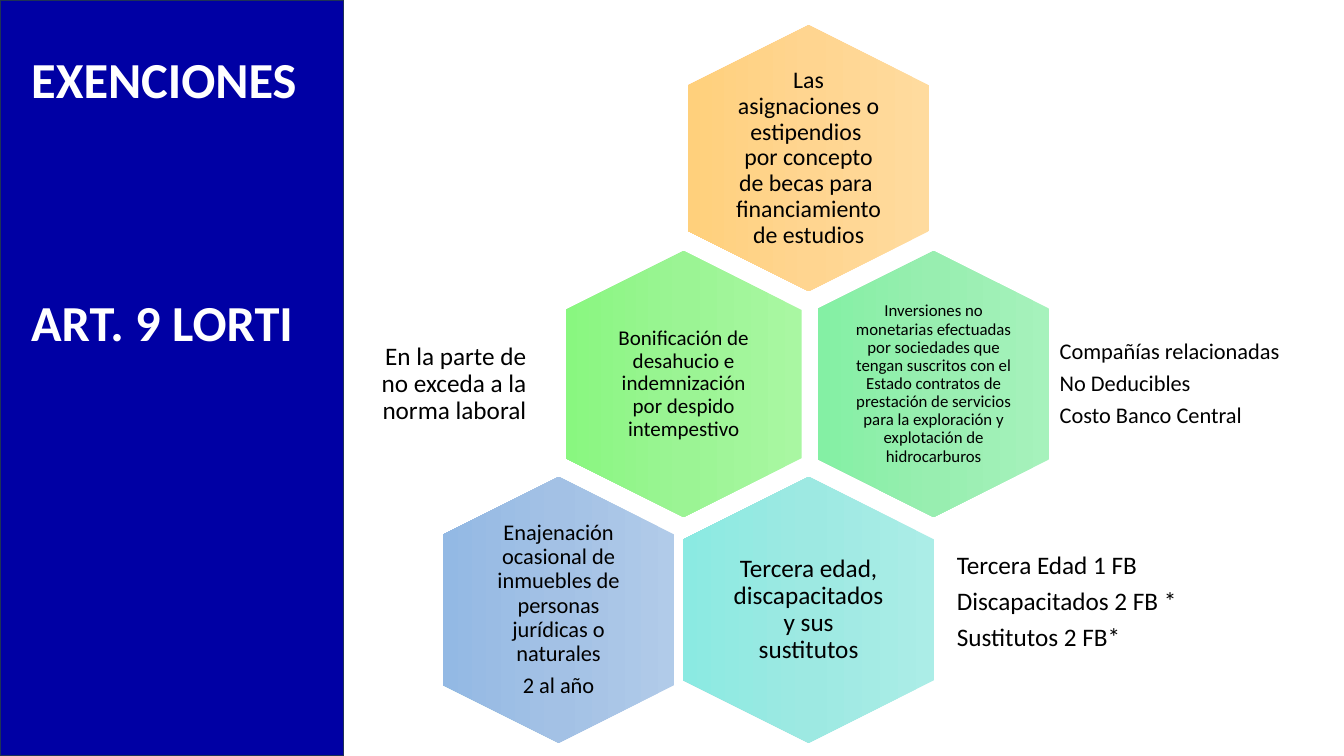
from copy import deepcopy
from dataclasses import dataclass

from lxml.etree import SubElement
from pptx import Presentation
from pptx.dml.color import RGBColor as RGB
from pptx.enum.shapes import MSO_SHAPE as Shape
from pptx.enum.text import MSO_ANCHOR as Anchor, MSO_AUTO_SIZE as AutoSize, PP_ALIGN as Align
from pptx.oxml.ns import qn
from pptx.util import Inches, Pt


@dataclass(frozen=True)
class Theme:
    font: str = "Calibri"
    ink: str = "000000"
    paper: str = "FFFFFF"
    panel: str = "0000A4"
    panel_edge: str = "1E3256"
    title_size: int = 36
    orange: tuple = ("FFDB9E", "FFD590", "FFD07C")
    green: tuple = ("A9F7A2", "9BF494", "89F780")
    mint: tuple = ("A6F2BC", "98EEB0", "84F0A4")
    aqua: tuple = ("ABEDE7", "9DE9E2", "8BEAE2")
    blue: tuple = ("B1CBE9", "A3C1E5", "93B9E4")


THEME = Theme()
SLIDE_W, SLIDE_H = 13.33, 7.5
PANEL_BOX = (0, 0, 3.41, SLIDE_H)

# Honeycomb grid: centre of the first cell, and the step between half columns and rows
FIRST_X, FIRST_Y = 5.54, 1.57
COLUMN_STEP, ROW_STEP = 1.24, 2.24
HEX_HEIGHT = 2.64

# column, row, width, colours, text width, inset, size, paragraphs
EXEMPTIONS = [
    (2, 0, 2.39, THEME.orange, 1.63, 0.07, 17,
     ["Las asignaciones o estipendios  por concepto de becas para  financiamiento de estudios"]),
    (1, 1, 2.34, THEME.green, 1.61, 0.06, 15,
     ["Bonificación de desahucio e indemnización por despido intempestivo"]),
    (3, 1, 2.29, THEME.mint, 1.58, 0, 12,
     ["Inversiones no monetarias efectuadas por sociedades que tengan suscritos con el Estado "
      "contratos de prestación de servicios para la exploración y explotación de hidrocarburos"]),
    (2, 2, 2.49, THEME.aqua, 1.68, 0.07, 18,
     ["Tercera edad, discapacitados y sus sustitutos"]),
    (0, 2, 2.29, THEME.blue, 1.58, 0, 16,
     ["Enajenación ocasional de inmuebles de personas jurídicas o naturales", "2 al año"]),
]

LABOUR_LIMIT = ((3.46, 3.02, 1.83, 1.58), 18, ["En la parte de no exceda a la norma laboral"])
# Placeholder index, box, size, paragraphs
LISTS = [
    (1, (10.44, 3.02, 2.94, 1.58), 16,
     ["Compañías relacionadas", "No Deducibles", "Costo Banco Central"]),
    (2, (9.42, 5.19, 2.94, 1.58), 18,
     ["Tercera Edad 1 FB", "Discapacitados 2 FB *", "Sustitutos 2 FB*"]),
]


def apply(target, **values):
    for name, value in values.items():
        setattr(target, name, value)


def place(holder, box):
    apply(holder, **dict(zip(("left", "top", "width", "height"), map(Inches, box))))


def write(holder, lines, size, align=Align.LEFT, inset=0.07, anchor=Anchor.MIDDLE,
          color=THEME.ink, bold=False, spacing=0.9, gap=0, after=0.35):
    """Fill a holder with paragraphs; gap is the space above all but the first."""
    frame = holder.text_frame
    margins = {f"margin_{side}": Inches(inset) for side in ("left", "right", "top", "bottom")}
    apply(frame, word_wrap=True, auto_size=AutoSize.NONE, vertical_anchor=anchor, **margins)
    for number, line in enumerate(lines):
        paragraph = frame.add_paragraph() if number else frame.paragraphs[0]
        properties = paragraph._p.get_or_add_pPr()
        properties.set("marL", "0")
        properties.set("indent", "0")
        SubElement(properties, qn("a:buNone"))
        apply(paragraph, alignment=align, line_spacing=spacing,
              space_before=Pt(gap if number else 0), space_after=Pt(size * after))
        run = paragraph.add_run()
        run.text = line
        apply(run.font, name=THEME.font, size=Pt(size), bold=bold)
        run.font.color.rgb = RGB.from_string(color)


def add_text(slide, box, lines, size, **style):
    write(slide.shapes.add_textbox(*map(Inches, box)), lines, size, **style)


def add_title_panel(slide, box):
    left, top, width, height = box
    panel = slide.shapes.add_shape(Shape.RECTANGLE, *map(Inches, box))
    panel.shadow.inherit = False
    panel.fill.solid()
    panel.fill.fore_color.rgb = RGB.from_string(THEME.panel)
    panel.line.color.rgb = RGB.from_string(THEME.panel_edge)
    panel.line.width = Pt(1)
    # Title sits in front of the panel
    title = slide.shapes.title
    panel._element.addnext(title._element)
    place(title, (left + 0.21, top + 0.38, width - 0.41, 3.13))
    write(title, ["EXENCIONES", "ART. 9 LORTI"], THEME.title_size, inset=0.1,
          anchor=Anchor.TOP, color=THEME.paper, bold=True, spacing=1.0, gap=130, after=0)


def shade(shape, colors):
    """Vertical gradient with evenly spaced stops."""
    shape.fill.gradient()
    shape.fill.gradient_angle = 270
    first_stop = shape._element.spPr.find(".//" + qn("a:gs"))
    first_stop.addnext(deepcopy(first_stop))
    for number, (stop, color) in enumerate(zip(shape.fill.gradient_stops, colors)):
        stop.color.rgb = RGB.from_string(color)
        stop.position = number / (len(colors) - 1)


def add_exemption(slide, column, row, width, colors, text_width, inset, size, lines):
    center_x = FIRST_X + column * COLUMN_STEP
    center_y = FIRST_Y + row * ROW_STEP
    # The hexagon lies on its side, so its length becomes the height once turned
    cell = slide.shapes.add_shape(
        Shape.HEXAGON, Inches(center_x - HEX_HEIGHT / 2), Inches(center_y - width / 2),
        Inches(HEX_HEIGHT), Inches(width))
    cell.rotation = 90
    cell.adjustments[0] = 0.25
    cell.shadow.inherit = False
    cell.line.fill.background()
    shade(cell, colors)
    text_height = 1.8
    add_text(slide, (center_x - text_width / 2, center_y - text_height / 2, text_width, text_height),
             lines, size, align=Align.CENTER, inset=inset)


def add_notes_beside(slide):
    box, size, lines = LABOUR_LIMIT
    add_text(slide, box, lines, size, align=Align.RIGHT)
    for index, box, size, lines in LISTS:
        body = slide.placeholders[index]
        place(body, box)
        write(body, lines, size)


def main():
    deck = Presentation()
    apply(deck, slide_width=Inches(SLIDE_W), slide_height=Inches(SLIDE_H))
    slide = deck.slides.add_slide(deck.slide_layouts.get_by_name("Two Content"))
    for exemption in EXEMPTIONS:
        add_exemption(slide, *exemption)
    add_notes_beside(slide)
    add_title_panel(slide, PANEL_BOX)
    deck.save("out.pptx")


if __name__ == "__main__":
    main()
